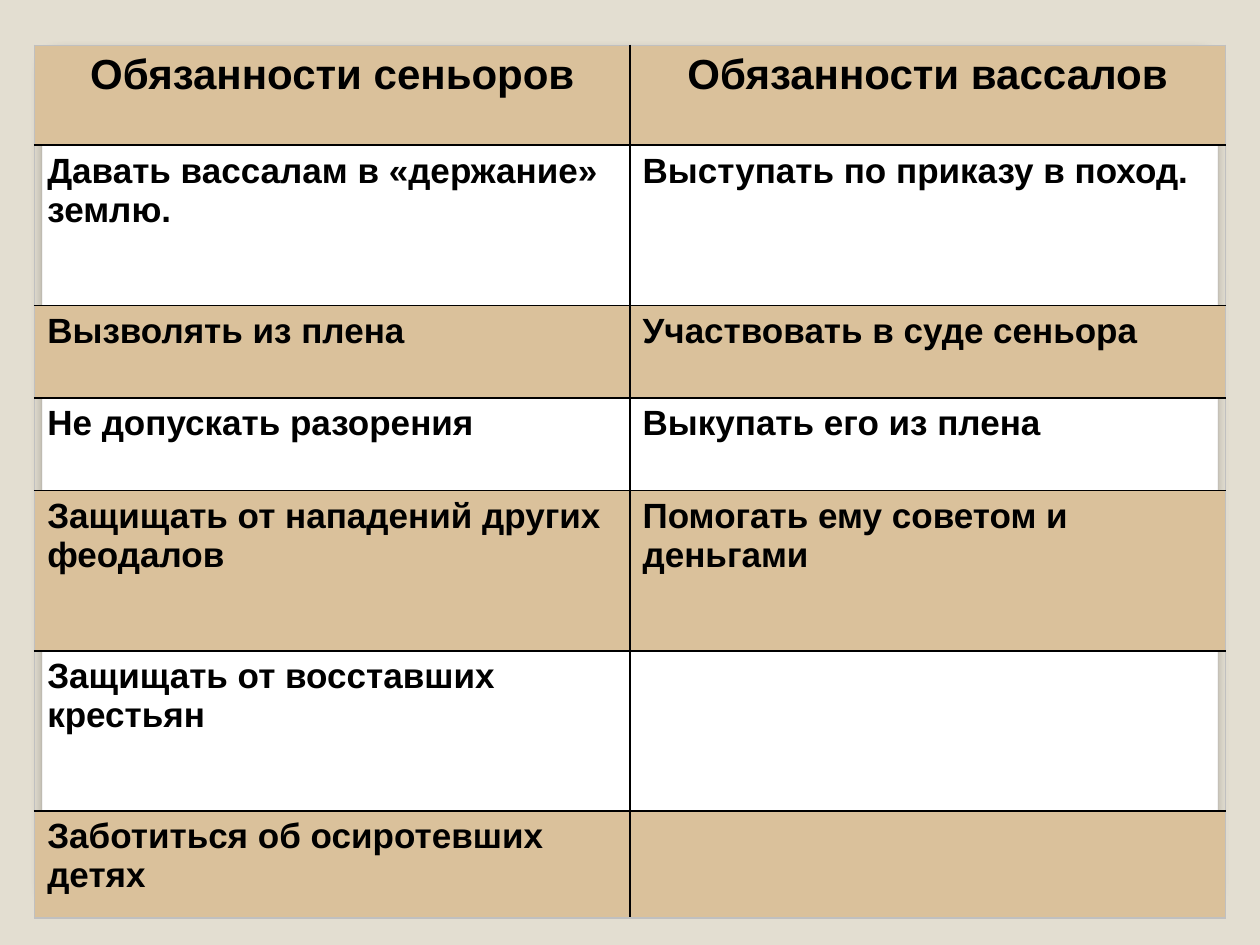
"""Builds a slide comparing the duties of seigneurs and vassals."""
from lxml import etree
from pptx import Presentation
from pptx.dml.color import RGBColor
from pptx.enum.shapes import MSO_SHAPE
from pptx.enum.text import PP_ALIGN
from pptx.oxml.ns import qn
from pptx.util import Pt

CARD = MSO_SHAPE.ROUNDED_RECTANGLE
CENTER = PP_ALIGN.CENTER
LEFT = PP_ALIGN.LEFT

COLORS = {
    "back": "E3DED1",
    "band": "DAC19B",
    "white": "FFFFFF",
    "edge": "DADADA",
    "outline": "A4A4A4",
    "frame": "C0C0C0",
    "black": "000000",
}
FONT = "Arial"
ROWS = [
    ("Обязанности сеньоров", "Обязанности вассалов"),
    ("Давать вассалам в «держание» землю.", "Выступать по приказу в поход."),
    ("Вызволять из плена", "Участвовать в суде сеньора"),
    ("Не допускать разорения", "Выкупать его из плена"),
    ("Защищать от нападений других феодалов", "Помогать ему советом и деньгами"),
    ("Защищать от восставших крестьян", ""),
    ("Заботиться об осиротевших детях", ""),
]
ROW_HEIGHTS = [57, 91.5, 53, 53, 91.5, 91.5, 61.2]
COL_WIDTH = 340.2


def rgb(name):
    return RGBColor.from_string(COLORS[name])


def add_color(parent, name):
    return etree.SubElement(parent, qn("a:srgbClr"), val=COLORS[name])


def add_shadow(sp, blur, dist, angle, alpha):
    effects = etree.SubElement(sp._element.spPr, qn("a:effectLst"))
    shadow = etree.SubElement(
        effects, qn("a:outerShdw"), blurRad=str(Pt(blur)), dist=str(Pt(dist)),
        dir=str(angle * 60000), algn="t", rotWithShape="0")
    color = add_color(shadow, "black")
    etree.SubElement(color, qn("a:alpha"), val=str(alpha * 1000))


def add_card(slide):
    sp = slide.shapes.add_shape(CARD, Pt(24), Pt(26), Pt(672), Pt(488))
    sp.adjustments[0] = 0.02
    sp.fill.gradient()
    sp.fill.gradient_angle = 270
    for stop, name, position in zip(sp.fill.gradient_stops, ("white", "edge"), (0.98, 1)):
        stop.color.rgb = rgb(name)
        stop.position = position
    sp.line.color.rgb = rgb("outline")
    sp.line.width = Pt(0.16)
    add_shadow(sp, 6, 4, 90, 25)


def set_borders(cell, outer):
    tc_pr = cell._tc.get_or_add_tcPr()
    for i, side in enumerate(("lnL", "lnR", "lnT", "lnB")):
        line = etree.Element(qn(f"a:{side}"), w=str(Pt(1)))
        fill = etree.SubElement(line, qn("a:solidFill"))
        add_color(fill, "frame" if side in outer else "black")
        tc_pr.insert(i, line)


def format_cell(cell, text, banded, size, align):
    if banded:
        cell.fill.solid()
        cell.fill.fore_color.rgb = rgb("band")
    else:
        cell.fill.background()
    p = cell.text_frame.paragraphs[0]
    p.text = text
    p.alignment = align
    p.font.size = Pt(size)
    for r in p.runs:
        r.font.name = FONT
        r.font.size = Pt(size)
        r.font.bold = True
        r.font.color.rgb = rgb("black")


def add_duties_table(slide):
    last = len(ROWS) - 1
    table = slide.shapes.add_table(
        len(ROWS), 2, Pt(19.8), Pt(26), Pt(2 * COL_WIDTH), Pt(sum(ROW_HEIGHTS))).table
    for col in table.columns:
        col.width = Pt(COL_WIDTH)
    for i, (texts, height) in enumerate(zip(ROWS, ROW_HEIGHTS)):
        table.rows[i].height = Pt(height)
        size, align = (24, CENTER) if i == 0 else (20, LEFT)
        for j, text in enumerate(texts):
            cell = table.cell(i, j)
            format_cell(cell, text, i % 2 == 0, size, align)
            outer = {"lnR" if j else "lnL"}
            if i == 0:
                outer.add("lnT")
            if i == last:
                outer.add("lnB")
            set_borders(cell, outer)


def main():
    prs = Presentation()
    prs.slide_width, prs.slide_height = Pt(720), Pt(540)
    slide = prs.slides.add_slide(prs.slide_layouts[6])
    slide.background.fill.solid()
    slide.background.fill.fore_color.rgb = rgb("back")
    add_card(slide)
    add_duties_table(slide)
    prs.save("out.pptx")


if __name__ == "__main__":
    main()
